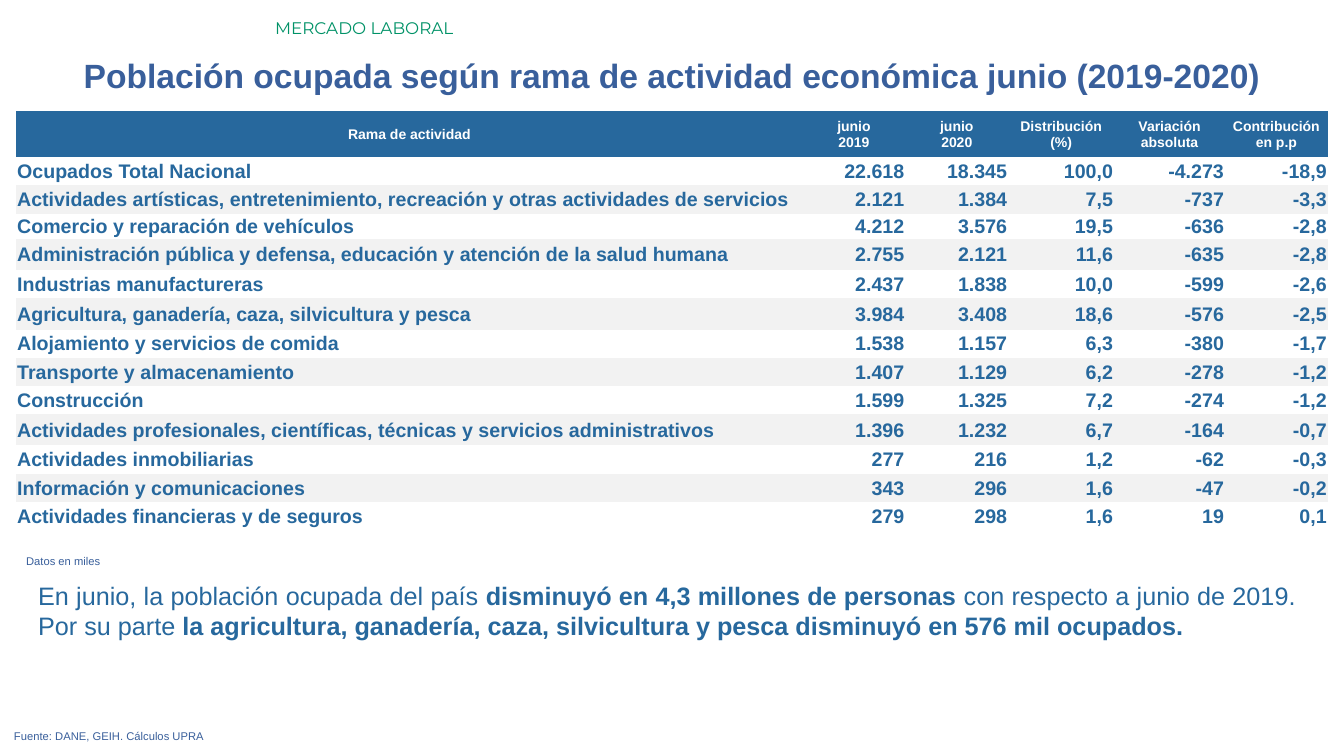
from pptx import Presentation
from pptx.util import Inches, Pt
from pptx.dml.color import RGBColor as Rgb
from pptx.enum.text import PP_ALIGN as Align, MSO_ANCHOR as Anchor, MSO_AUTO_SIZE as Auto


class Theme:
    blue = Rgb(0x27, 0x68, 0x9D)
    navy = Rgb(0x39, 0x5F, 0x9B)
    green = Rgb(0x00, 0x92, 0x67)
    white = Rgb(0xFF, 0xFF, 0xFF)
    band = Rgb(0xF2, 0xF2, 0xF2)
    sans = "Arial"
    tag_face = "Montserrat"
    title, lead, body, tag, head, note = 24, 18, 14, 12, 10, 8


def style(para, size, color, align, bold=None, face=Theme.sans):
    para.alignment = align
    font = para.font
    font.name, font.size, font.bold = face, Pt(size), bold
    font.color.rgb = color


def add_text(box, runs, size, color, align, face=Theme.sans):
    frame = slide.shapes.add_textbox(*map(Inches, box)).text_frame
    frame.word_wrap = True
    frame.auto_size = Auto.SHAPE_TO_FIT_TEXT
    para = frame.paragraphs[0]
    style(para, size, color, align, face=face)
    for text, bold in runs:
        run = para.add_run()
        run.text = text
        run.font.bold = bold


deck = Presentation()
deck.slide_width, deck.slide_height = Inches(13.33), Inches(7.5)
slide = deck.slides.add_slide(deck.slide_layouts[6])

add_text((2.63, 0.13, 10.7, 0.3), [("MERCADO LABORAL", False)],
         Theme.tag, Theme.green, Align.LEFT, Theme.tag_face)
add_text((0, 0.5, 13.33, 0.5),
         [("Población ocupada según rama de actividad económica junio (2019-2020)", True)],
         Theme.title, Theme.navy, Align.CENTER)
add_text((0.28, 5.71, 12.67, 0.71), [
    ("En junio, la población ocupada del país ", False),
    ("disminuyó en 4,3 millones de personas ", True),
    ("con respecto a junio de 2019. Por su parte ", False),
    ("la agricultura, ganadería, caza, silvicultura y pesca disminuyó en 576 mil ocupados.", True),
], Theme.lead, Theme.blue, Align.JUSTIFY)
add_text((0.04, 7.19, 12.91, 0.24), [("Fuente: DANE, GEIH. Cálculos UPRA", False)],
         Theme.note, Theme.navy, Align.JUSTIFY)

rows = [
    ("Rama de actividad", "junio\v2019", "junio\v2020", "Distribución\n(%)",
     "Variación\nabsoluta", "Contribución\nen p.p"),
    ("Ocupados Total Nacional", "22.618", "18.345", "100,0", "-4.273", "-18,9"),
    ("Actividades artísticas, entretenimiento, recreación y otras actividades de servicios",
     "2.121", "1.384", "7,5", "-737", "-3,3"),
    ("Comercio y reparación de vehículos", "4.212", "3.576", "19,5", "-636", "-2,8"),
    ("Administración pública y defensa, educación y atención de la salud humana",
     "2.755", "2.121", "11,6", "-635", "-2,8"),
    ("Industrias manufactureras", "2.437", "1.838", "10,0", "-599", "-2,6"),
    ("Agricultura, ganadería, caza, silvicultura y pesca",
     "3.984", "3.408", "18,6", "-576", "-2,5"),
    ("Alojamiento y servicios de comida", "1.538", "1.157", "6,3", "-380", "-1,7"),
    ("Transporte y almacenamiento", "1.407", "1.129", "6,2", "-278", "-1,2"),
    ("Construcción", "1.599", "1.325", "7,2", "-274", "-1,2"),
    ("Actividades profesionales, científicas, técnicas y servicios administrativos",
     "1.396", "1.232", "6,7", "-164", "-0,7"),
    ("Actividades inmobiliarias", "277", "216", "1,2", "-62", "-0,3"),
    ("Información y comunicaciones", "343", "296", "1,6", "-47", "-0,2"),
    ("Actividades financieras y de seguros", "279", "298", "1,6", "19", "0,1"),
]
widths = [7.8, 1.02, 1.02, 1.05, 1.1, 1.02]
highs = {0: 0.46, 3: 0.25, 4: 0.31, 6: 0.31, 10: 0.31}

grid = slide.shapes.add_table(len(rows), len(widths), Inches(0.16), Inches(1.1),
                              Inches(13.02), Inches(4.14)).table
grid.first_row = grid.horz_banding = False
grid._tbl.tblPr[0].text = "{2D5ABB26-0587-4C30-8999-92F81FD0307C}"
for col, width in zip(grid.columns, widths):
    col.width = Inches(width)

for i, row in enumerate(rows):
    grid.rows[i].height = Inches(highs.get(i, 0.28))
    for j, text in enumerate(row):
        cell = grid.cell(i, j)
        cell.text = text
        cell.vertical_anchor = Anchor.MIDDLE
        cell.margin_left = cell.margin_right = cell.margin_top = Inches(0.01)
        cell.margin_bottom = 0
        if i % 2:
            cell.fill.background()
        else:
            cell.fill.solid()
            cell.fill.fore_color.rgb = Theme.band if i else Theme.blue
        for para in cell.text_frame.paragraphs:
            if i == 0:
                style(para, Theme.head, Theme.white, Align.CENTER, True)
            else:
                style(para, Theme.body, Theme.blue, Align.RIGHT if j else Align.LEFT, True)

add_text((0.16, 5.45, 12.91, 0.24), [("Datos en miles", False)],
         Theme.note, Theme.navy, Align.JUSTIFY)

deck.save("out.pptx")
